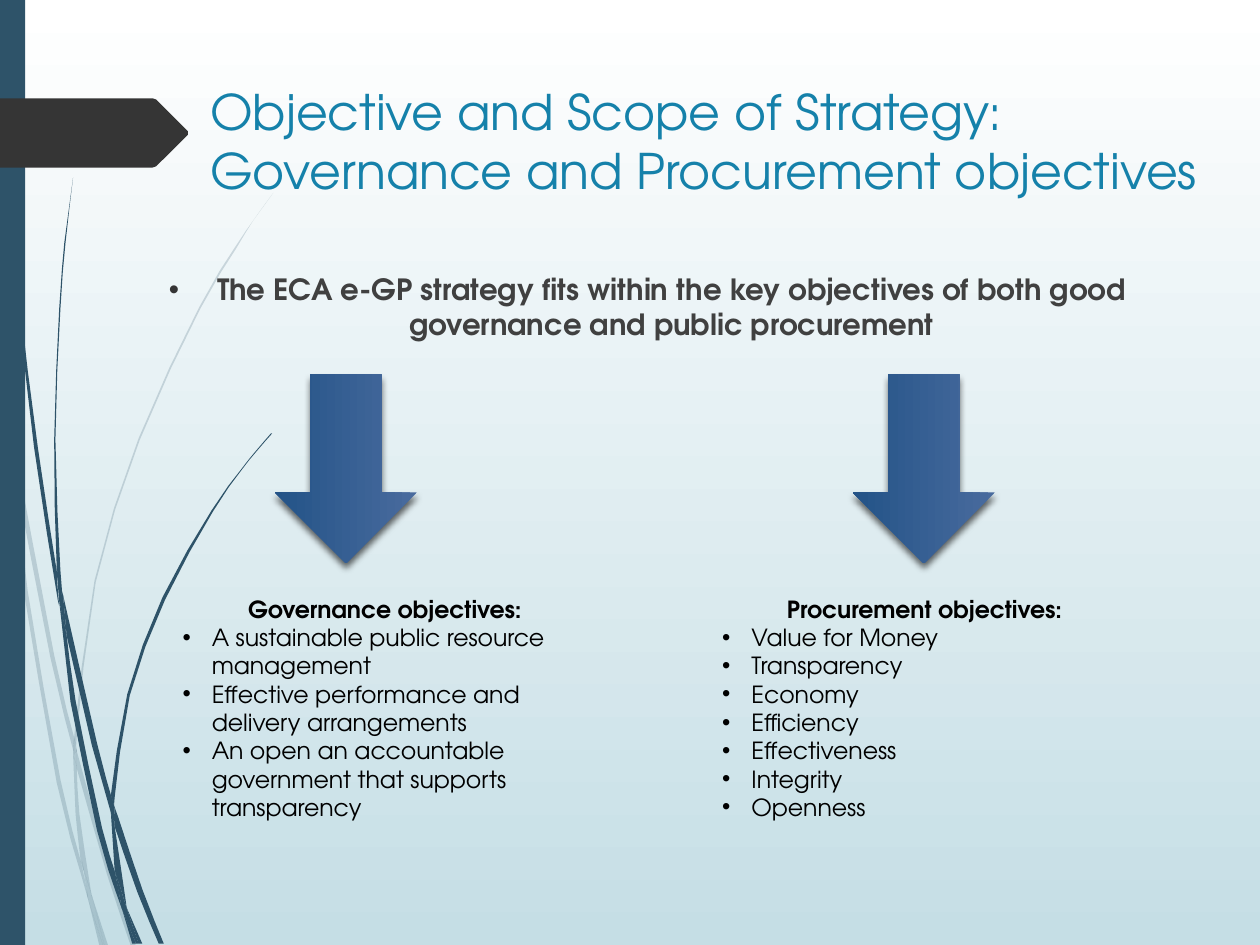
from lxml import etree
from pptx import Presentation
from pptx.dml.color import RGBColor
from pptx.enum.shapes import MSO_SHAPE
from pptx.enum.text import MSO_ANCHOR, PP_ALIGN
from pptx.oxml.ns import qn
from pptx.util import Cm, Pt

RECT, ARROW = MSO_SHAPE.RECTANGLE, MSO_SHAPE.RIGHT_ARROW
TOP, MIDDLE = MSO_ANCHOR.TOP, MSO_ANCHOR.MIDDLE
LEFT, CENTER = PP_ALIGN.LEFT, PP_ALIGN.CENTER

WHITE = RGBColor(0xFF, 0xFF, 0xFF)
BLACK = RGBColor(0, 0, 0)
MIST = RGBColor(0xC5, 0xDE, 0xE5)
NAVY = RGBColor(0x2E, 0x53, 0x69)
COAL = RGBColor(0x35, 0x35, 0x35)
GRAY = RGBColor(0x40, 0x40, 0x40)
TEAL = RGBColor(0x15, 0x81, 0xAA)
PALE = RGBColor(0x49, 0x6B, 0x9E)
DEEP = RGBColor(0x23, 0x53, 0x87)

FACE = "TeX Gyre Adventor"
TITLE = {"name": FACE, "size": Pt(28), "bold": False}
LEAD = {"name": FACE, "size": Pt(16.7), "bold": True}
HEAD = {"name": FACE, "size": Pt(13.5), "bold": True}
ITEM = {"name": FACE, "size": Pt(13.5), "bold": False}

GRID = 2.54 / 100
FAINT = [
    ([(0, 282), (6, 322), (8, 350)], [(7, 344), (0, 299)]),
    ([(10, 345), (43, 520), (59, 586)], [(59, 599), (40, 522), (12, 376)]),
    ([(61, 596), (64, 607), (88, 692), (108, 751)], [(104, 751), (85, 694), (61, 610)]),
    ([(73, 711), (86, 751)], [(83, 751)]),
    ([(8, 350), (12, 376), (22, 469), (48, 619), (64, 683), (69, 707), (70, 714)],
     [(64, 693), (45, 621), (19, 470)]),
    ([(58, 599), (61, 608), (61, 610), (63, 646), (72, 706), (73, 711)],
     [(67, 692), (64, 683), (60, 646)]),
    ([(217, 153), (201, 175), (187, 198), (159, 245), (111, 349), (76, 462), (61, 584), (61, 596)],
     [(59, 586), (59, 584), (75, 461), (110, 348), (158, 244), (186, 197), (201, 175)]),
    ([(70, 714), (82, 751)], [(79, 751)]),
    ([(59, 586), (61, 596), (61, 610)], [(61, 608), (58, 599)]),
    ([(65, 683), (69, 707), (70, 714), (82, 751)], [(83, 751), (73, 711), (67, 692)]),
]
DARK = [
    ([(3, 0), (4, 48), (6, 109), (15, 232), (30, 355), (45, 453), (45, 457), (47, 481)],
     [(46, 477), (27, 355), (14, 233), (5, 110), (3, 48), (2, 0)]),
    ([(50, 472), (77, 590), (88, 631), (88, 633), (88, 645)], [(73, 592), (53, 505)]),
    ([(91, 641), (94, 649), (113, 706), (130, 749)], [(126, 749), (109, 708), (91, 656)]),
    ([(47, 477), (53, 505), (60, 556), (81, 657), (91, 691), (96, 717), (97, 722)],
     [(92, 708), (77, 659), (56, 557)]),
    ([(58, 141), (52, 193), (48, 245), (44, 349), (48, 453), (50, 472)],
     [(49, 472), (45, 449), (43, 349), (47, 245), (51, 193)]),
    ([(100, 719), (113, 749)], [(110, 749)]),
    ([(45, 449), (49, 472), (50, 472), (53, 505)], [(47, 477), (45, 453)]),
    ([(216, 344), (203, 359), (191, 374), (169, 406), (131, 476), (103, 552), (91, 633), (91, 641)],
     [(88, 631), (101, 551), (129, 474), (168, 405), (191, 373), (203, 358), (215, 344)]),
    ([(97, 722), (108, 749)], [(105, 749)]),
    ([(88, 645), (90, 651), (91, 656), (100, 716), (100, 719)], [(96, 706), (91, 691)]),
    ([(88, 631), (91, 641), (91, 656)], [(90, 651), (88, 645), (88, 633)]),
    ([(91, 691), (96, 717), (97, 722), (108, 749)], [(110, 749), (100, 719), (96, 706)]),
]
TAG = ([(0, 78), (121, 78), (124, 79), (149, 104)], [(149, 107), (124, 132), (121, 133), (0, 133)])

GOALS = [
    ("Governance objectives:", [
        "A sustainable public resource management",
        "Effective performance and delivery arrangements",
        "An open an accountable government that supports transparency"]),
    ("Procurement objectives:", [
        "Value for Money", "Transparency", "Economy", "Efficiency",
        "Effectiveness", "Integrity", "Openness"]),
]


def blend(fill, first, last):
    """Fill with a two-stop gradient at ninety degrees clockwise."""
    fill.gradient()
    fill.gradient_angle = 270
    for stop, tone in zip(fill.gradient_stops, (first, last)):
        stop.color.rgb = tone


def paint(shape, tone, alpha=None):
    """Give a shape a plain fill with no line or shadow."""
    shape.shadow.inherit = False
    shape.line.fill.background()
    shape.fill.solid()
    shape.fill.fore_color.rgb = tone
    if alpha:
        clr = next(shape._element.spPr.iter(qn("a:srgbClr")))
        etree.SubElement(clr, qn("a:alpha"), val=str(alpha * 1000))


def smooth(knots, steps):
    """Return points on a Catmull-Rom curve through the knots."""
    ends = [knots[0], *knots, knots[-1]]
    curve = []
    for span in zip(ends, ends[1:], ends[2:], ends[3:]):
        for t in (i / steps for i in range(steps)):
            curve.append(tuple(
                q + t * ((r - p) + t * ((2 * p - 5 * q + 4 * r - s)
                                        + t * (3 * q - p - 3 * r + s))) / 2
                for p, q, r, s in zip(*span)))
    return curve + [knots[-1]]


def add_piece(slide, box, sides, tone, alpha=None, steps=2):
    """Draw one outline that runs along its two sides."""
    left, top = box[:2]
    ring = [(Cm(left + x * GRID), Cm(top + y * GRID))
            for side in sides for x, y in smooth(side, steps)]
    form = slide.shapes.build_freeform(*ring[0], scale=1)
    form.add_line_segments(ring[1:], close=True)
    paint(form.convert_to_shape(), tone, alpha)


def add_side(slide, box):
    """Draw the stems, the side bar and the tag."""
    left, top, width, height = box
    for sides in FAINT:
        add_piece(slide, box, sides, NAVY, 20)
    for sides in DARK:
        add_piece(slide, box, sides, NAVY)
    bar = slide.shapes.add_shape(RECT, *map(Cm, (left, top, width, height)))
    paint(bar, NAVY)
    add_piece(slide, box, TAG, COAL, steps=1)


def add_frame(slide, box, anchor=TOP):
    """Add a wrapping text box and return its frame."""
    frame = slide.shapes.add_textbox(*map(Cm, box)).text_frame
    frame.word_wrap = True
    frame.vertical_anchor = anchor
    return frame


def write(para, text, style, tone, align=LEFT):
    """Write one styled run into a paragraph."""
    para.alignment = align
    run = para.add_run()
    run.text = text
    for key, value in style.items():
        setattr(run.font, key, value)
    run.font.color.rgb = tone


def add_dot(para, indent, tone):
    """Give a paragraph a hanging bullet."""
    props = para._p.get_or_add_pPr()
    props.set("marL", str(Cm(indent)))
    props.set("indent", str(-Cm(indent)))
    clr = etree.SubElement(props, qn("a:buClr"))
    etree.SubElement(clr, qn("a:srgbClr"), val=str(tone))
    etree.SubElement(props, qn("a:buFont"), typeface="Arial")
    etree.SubElement(props, qn("a:buChar"), char="•")


def add_arrow(slide, box):
    """Draw a shaded arrow that points down."""
    arrow = slide.shapes.add_shape(ARROW, *map(Cm, box))
    arrow.rotation = 90
    arrow.line.fill.background()
    blend(arrow.fill, PALE, DEEP)
    arrow.shadow.inherit = False
    shade = etree.SubElement(
        arrow._element.spPr.find(qn("a:effectLst")), qn("a:outerShdw"),
        blurRad=str(Pt(4)), dist=str(Pt(3)), dir="5400000", rotWithShape="0")
    clr = etree.SubElement(shade, qn("a:srgbClr"), val=str(BLACK))
    etree.SubElement(clr, qn("a:alpha"), val="60000")


def add_goals(slide, box, head, items):
    """Place a heading over its bulleted goals."""
    frame = add_frame(slide, box)
    write(frame.paragraphs[0], head, HEAD, BLACK, CENTER)
    for item in items:
        para = frame.add_paragraph()
        write(para, item, ITEM, BLACK)
        add_dot(para, 0.59, BLACK)


def main():
    """Build and save the slide."""
    deck = Presentation()
    deck.slide_width, deck.slide_height = Cm(25.4), Cm(19.05)
    slide = deck.slides.add_slide(deck.slide_layouts[6])
    blend(slide.background.fill, WHITE, MIST)
    add_side(slide, (0, 0, 0.51, 19.05))
    title = add_frame(slide, (3.99, 1.5, 21.87, 2.67), MIDDLE).paragraphs[0]
    write(title, "Objective and Scope of Strategy: Governance and Procurement objectives", TITLE, TEAL)
    lead = add_frame(slide, (2.54, 5.35, 21.03, 1.45)).paragraphs[0]
    write(lead, "The ECA e-GP strategy fits within the key objectives of both good "
          "governance and public procurement", LEAD, GRAY, CENTER)
    add_dot(lead, 0.97, COAL)
    for left in (5.07, 16.72):
        add_arrow(slide, (left, 8.02, 3.81, 2.87))
    for left, (head, items) in zip((3.43, 14.31), GOALS):
        add_goals(slide, (left, 11.86, 8.66, 4.88), head, items)
    deck.save("out.pptx")


if __name__ == "__main__":
    main()
